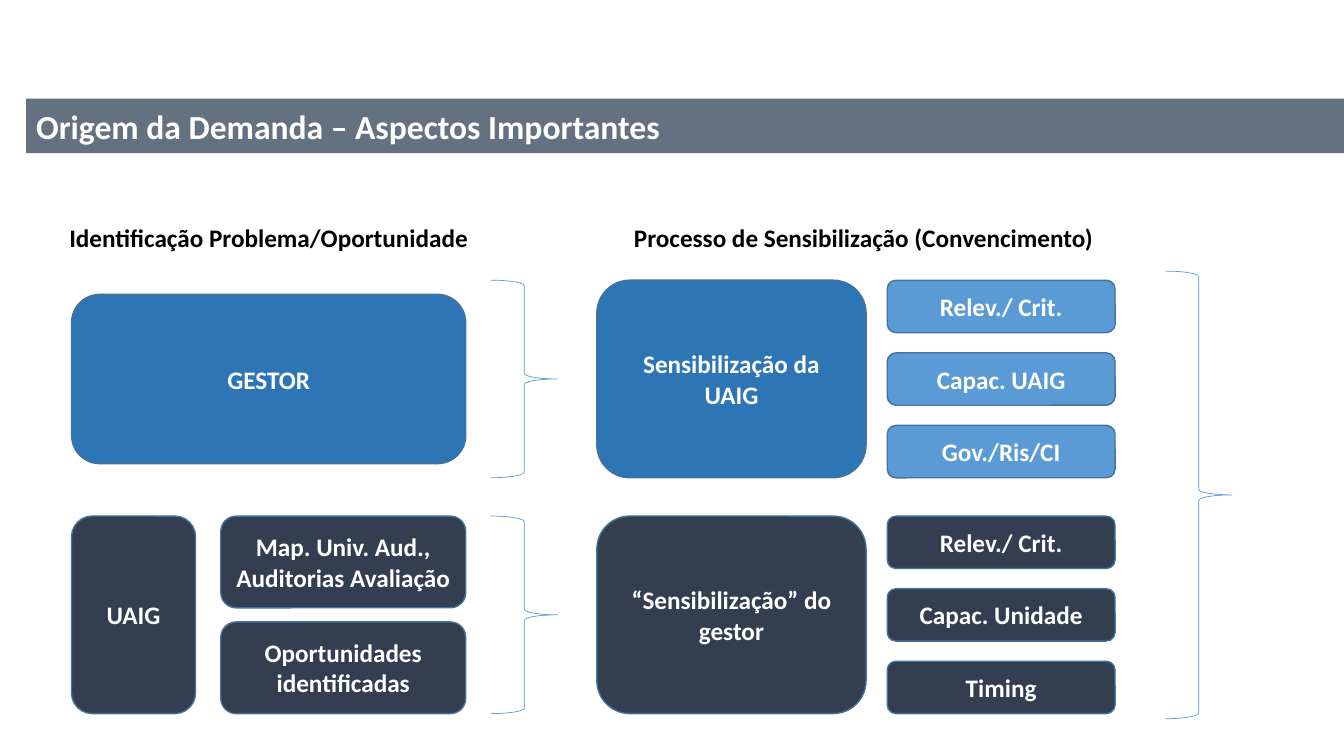
"""Build the slide on where demand comes from and how each side is persuaded."""
from pptx import Presentation
from pptx.dml.color import RGBColor
from pptx.enum.shapes import MSO_SHAPE as SHAPE
from pptx.enum.text import MSO_ANCHOR as ANCHOR, PP_ALIGN as ALIGN
from pptx.util import Inches, Pt

COLORS = {
    "banner": "637181",
    "manager": "2E75B6",
    "criterion": "5B9BD5",
    "audit": "333F50",
    "outline": "43739E",
    "brace": "5B9BD5",
    "white": "FFFFFF",
    "black": "000000",
}


def color(name):
    return RGBColor.from_string(COLORS[name])


def add_text(text, left, top, width, height, *, kind=SHAPE.ROUNDED_RECTANGLE, fill=None,
             outline="outline", weight=1, size=18, ink="white", align=ALIGN.CENTER,
             anchor=ANCHOR.MIDDLE):
    """Add a shape, or a text box when kind is None, with one paragraph per line."""
    place = [Inches(length) for length in (left, top, width, height)]
    if kind is None:
        shape = slide.shapes.add_textbox(*place)
    else:
        shape = slide.shapes.add_shape(kind, *place)
        shape.shadow.inherit = False
        if fill:
            shape.fill.solid()
            shape.fill.fore_color.rgb = color(fill)
        else:
            shape.fill.background()
        if outline:
            shape.line.color.rgb = color(outline)
            shape.line.width = Pt(weight)
        else:
            shape.line.fill.background()
    if not text:
        return
    frame = shape.text_frame
    frame.word_wrap = True
    frame.vertical_anchor = anchor
    for index, line in enumerate(text.split("\n")):
        paragraph = frame.add_paragraph() if index else frame.paragraphs[0]
        paragraph.alignment = align
        run = paragraph.add_run()
        run.text = line
        run.font.name = "Calibri"
        run.font.size = Pt(size)
        run.font.bold = True
        run.font.color.rgb = color(ink)


presentation = Presentation()
presentation.slide_width = Inches(13.33)
presentation.slide_height = Inches(7.5)
slide = presentation.slides.add_slide(presentation.slide_layouts[6])

add_text("Origem da Demanda – Aspectos Importantes", 0.26, 0.98, 13.07, 0.54,
         kind=SHAPE.RECTANGLE, fill="banner", outline=None, size=24, align=ALIGN.LEFT)

headings = [
    ("Identificação Problema/Oportunidade", 0.57, 4.19),
    ("Processo de Sensibilização (Convencimento)", 5.92, 5.29),
]
for heading, left, width in headings:
    add_text(heading, left, 2.16, width, 0.4, kind=None, ink="black", anchor=ANCHOR.TOP)

MANAGER_TOP, AUDIT_TOP, ROW_HEIGHT = 2.78, 5.12, 1.96
add_text("GESTOR", 0.71, 2.92, 3.91, 1.68, fill="manager")
add_text("UAIG", 0.71, AUDIT_TOP, 1.23, ROW_HEIGHT, fill="audit")
sources = ["Map. Univ. Aud.,\nAuditorias Avaliação", "Oportunidades identificadas"]
for index, source in enumerate(sources):
    add_text(source, 2.19, AUDIT_TOP + 1.05 * index, 2.43, 0.91, fill="audit")

rows = [
    (MANAGER_TOP, "Sensibilização da UAIG", "manager", "criterion",
     ["Relev./ Crit.", "Capac. UAIG", "Gov./Ris/CI"]),
    (AUDIT_TOP, "“Sensibilização” do gestor", "audit", "audit",
     ["Relev./ Crit.", "Capac. Unidade", "Timing"]),
]
for top, process, process_fill, criterion_fill, criteria in rows:
    add_text(process, 5.92, top, 2.67, ROW_HEIGHT, fill=process_fill)
    for index, criterion in enumerate(criteria):
        add_text(criterion, 8.8, top + 0.72 * index, 2.26, 0.52, fill=criterion_fill)

braces = [
    (4.87, MANAGER_TOP, ROW_HEIGHT),
    (4.87, AUDIT_TOP, ROW_HEIGHT),
    (11.56, 2.69, 4.44),
]
for left, top, height in braces:
    add_text("", left, top, 0.66, height, kind=SHAPE.RIGHT_BRACE, outline="brace", weight=0.5)

presentation.save("out.pptx")
